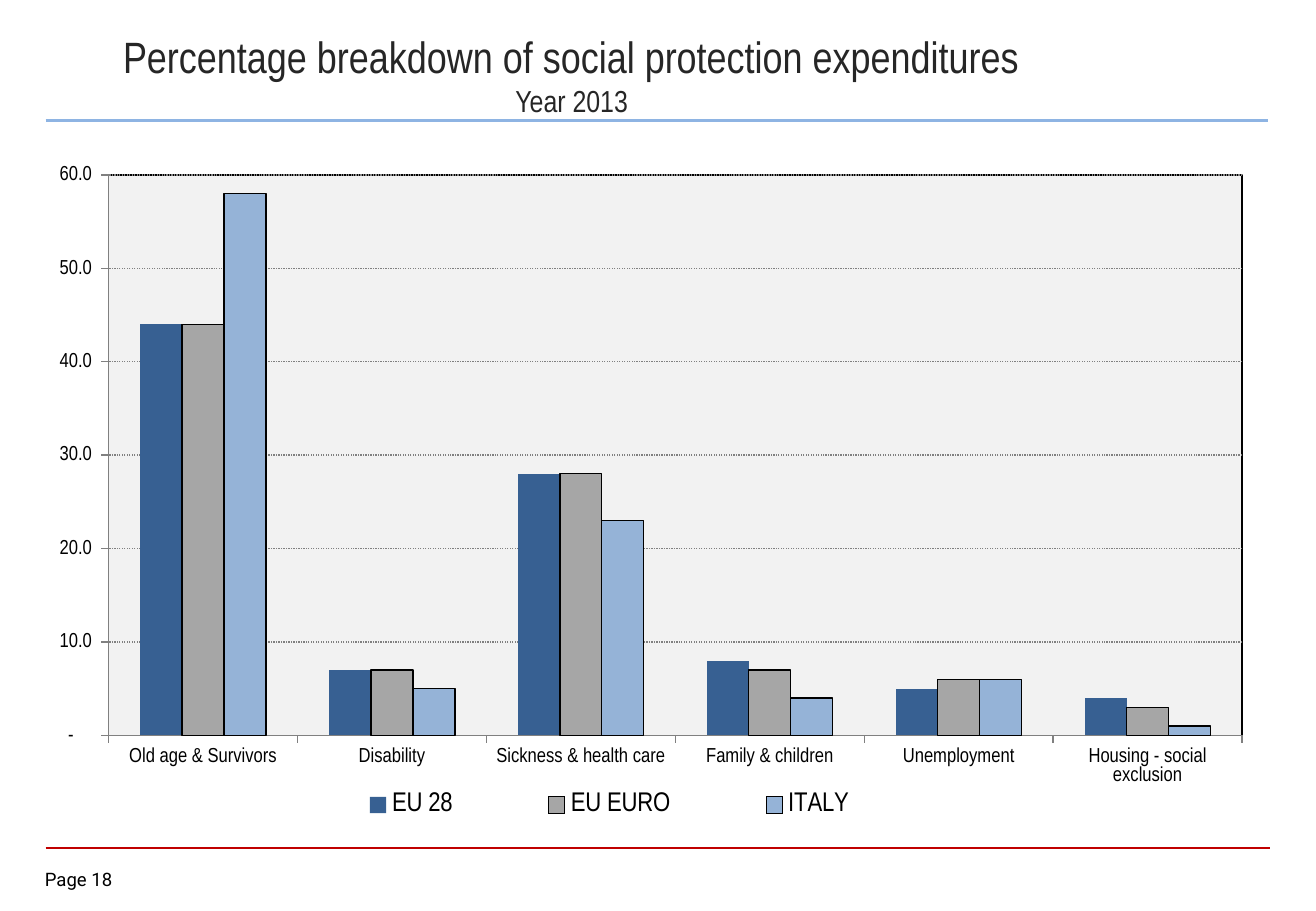
from dataclasses import dataclass

from lxml import etree
from pptx import Presentation
from pptx.chart.data import CategoryChartData
from pptx.dml.color import RGBColor
from pptx.enum.chart import XL_CHART_TYPE, XL_LEGEND_POSITION, XL_TICK_MARK
from pptx.enum.dml import MSO_LINE
from pptx.enum.shapes import MSO_CONNECTOR
from pptx.enum.text import MSO_ANCHOR, MSO_AUTO_SIZE, PP_ALIGN
from pptx.oxml import parse_xml
from pptx.oxml.ns import nsdecls, qn
from pptx.util import Pt


@dataclass(frozen=True)
class Theme:
    black: RGBColor = RGBColor(0x00, 0x00, 0x00)
    title: RGBColor = RGBColor(0x26, 0x26, 0x26)
    header_rule: RGBColor = RGBColor(0x8E, 0xB4, 0xE3)
    footer_rule: RGBColor = RGBColor(0xC0, 0x00, 0x00)
    axis: RGBColor = RGBColor(0x80, 0x80, 0x80)
    plot: RGBColor = RGBColor(0xF2, 0xF2, 0xF2)
    eu_28: RGBColor = RGBColor(0x37, 0x60, 0x92)
    eu_euro: RGBColor = RGBColor(0xA6, 0xA6, 0xA6)
    italy: RGBColor = RGBColor(0x95, 0xB3, 0xD7)
    narrow: str = "Arial Narrow"
    page: str = "Roboto"
    title_size: float = 26
    subtitle_size: float = 18
    legend_size: float = 16
    axis_size: float = 12
    page_size: float = 11


THEME = Theme()
NUMBER_FORMAT = r'_-* #,##0.0_-;\-* #,##0.0_-;_-* "-"??_-;_-@_-'
CATEGORIES = ("Old age & Survivors", "Disability", "Sickness & health care",
              "Family & children", "Unemployment", "Housing - social exclusion")
# name, values, fill, outlined
SERIES = (
    ("EU 28", (44, 7, 28, 8, 5, 4), THEME.eu_28, False),
    ("EU EURO", (44, 7, 28, 7, 6, 3), THEME.eu_euro, True),
    ("ITALY", (58, 5, 23, 4, 6, 1), THEME.italy, True),
)


def set_font(font, name, size, color):
    for attribute, value in {"name": name, "size": Pt(size), "bold": False}.items():
        setattr(font, attribute, value)
    font.color.rgb = color


def set_frame(text_frame, **formats):
    defaults = {"word_wrap": True, "auto_size": MSO_AUTO_SIZE.NONE,
                "vertical_anchor": MSO_ANCHOR.TOP}
    for attribute, value in (defaults | formats).items():
        setattr(text_frame, attribute, value)


def add_rule(slide, left, top, width, color, weight):
    rule = slide.shapes.add_connector(
        MSO_CONNECTOR.STRAIGHT, Pt(left), Pt(top), Pt(left + width), Pt(top))
    rule.line.color.rgb = color
    rule.line.width = Pt(weight)
    etree.SubElement(rule._element.spPr, qn("a:effectLst"))


def add_header(slide, left, top, width, height):
    title = slide.shapes.title
    title.left, title.top, title.width, title.height = map(Pt, (left, top, width, height))
    frame = title.text_frame
    set_frame(frame, margin_top=Pt(4), margin_bottom=Pt(0))
    frame.text = "Percentage breakdown of social protection expenditures\nYear 2013"
    for paragraph, size in zip(frame.paragraphs, (THEME.title_size, THEME.subtitle_size)):
        for attribute, value in {"alignment": PP_ALIGN.CENTER, "line_spacing": 1.0,
                                 "space_before": Pt(0)}.items():
            setattr(paragraph, attribute, value)
        set_font(paragraph.runs[0].font, THEME.narrow, size, THEME.title)
    add_rule(slide, left, top + 57.6, 724.5, THEME.header_rule, 1.5)


def add_footer(slide, left, top, width):
    add_rule(slide, left, top, width, THEME.footer_rule, 1)
    box = slide.shapes.add_textbox(Pt(left - 0.5), Pt(top + 12), Pt(53), Pt(16))
    frame = box.text_frame
    set_frame(frame, word_wrap=False, margin_left=0, margin_top=0,
              margin_right=0, margin_bottom=0)
    frame.text = "Page 18"
    set_font(frame.paragraphs[0].runs[0].font, THEME.page, THEME.page_size, THEME.black)


def make_layout(x, y, width, height, inner=False):
    """Return a manual chart layout in fractions of the chart area."""
    target = '<c:layoutTarget val="inner"/>' if inner else ""
    return parse_xml(
        f'<c:layout {nsdecls("c")}><c:manualLayout>{target}'
        '<c:xMode val="edge"/><c:yMode val="edge"/>'
        f'<c:x val="{x}"/><c:y val="{y}"/><c:w val="{width}"/><c:h val="{height}"/>'
        '</c:manualLayout></c:layout>')


def format_plot_area(chart):
    plot_area = chart._chartSpace.chart.plotArea
    for layout in plot_area.findall(qn("c:layout")):
        plot_area.remove(layout)
    plot_area.insert(0, make_layout(0.052, 0.023, 0.937, 0.814, inner=True))
    plot_area.append(parse_xml(
        f'<c:spPr {nsdecls("c", "a")}>'
        f'<a:solidFill><a:srgbClr val="{THEME.plot}"/></a:solidFill>'
        f'<a:ln w="{Pt(0.75)}"><a:solidFill><a:srgbClr val="{THEME.black}"/>'
        '</a:solidFill></a:ln></c:spPr>'))


def format_axes(chart):
    for axis in (chart.category_axis, chart.value_axis):
        axis.major_tick_mark = XL_TICK_MARK.OUTSIDE
        axis.minor_tick_mark = XL_TICK_MARK.NONE
        axis.format.line.color.rgb = THEME.axis
        axis.format.line.width = Pt(0.75)
        set_font(axis.tick_labels.font, THEME.narrow, THEME.axis_size, THEME.black)
    value_axis = chart.value_axis
    for attribute, value in {"minimum_scale": 0, "maximum_scale": 60, "major_unit": 10,
                             "has_major_gridlines": True}.items():
        setattr(value_axis, attribute, value)
    value_axis.tick_labels.number_format = NUMBER_FORMAT
    value_axis.tick_labels.number_format_is_linked = False
    gridline = value_axis.major_gridlines.format.line
    gridline.color.rgb = THEME.axis
    gridline.width = Pt(0.75)
    gridline.dash_style = MSO_LINE.ROUND_DOT


def format_legend(chart):
    chart.has_legend = True
    legend = chart.legend
    legend.position = XL_LEGEND_POSITION.RIGHT
    legend.include_in_layout = False
    set_font(legend.font, THEME.narrow, THEME.legend_size, THEME.black)
    element = legend._element
    for layout in element.findall(qn("c:layout")):
        element.remove(layout)
    element.find(qn("c:legendPos")).addnext(make_layout(0.196, 0.913, 0.54, 0.05))


def add_expenditure_chart(slide, left, top, width, height):
    data = CategoryChartData(number_format="0")
    data.categories = CATEGORIES
    for name, values, _, _ in SERIES:
        data.add_series(name, values)
    chart = slide.shapes.add_chart(
        XL_CHART_TYPE.COLUMN_CLUSTERED, Pt(left), Pt(top), Pt(width), Pt(height), data).chart
    chart.has_title = False
    set_font(chart.font, THEME.narrow, THEME.axis_size, THEME.black)
    plot = chart.plots[0]
    for attribute, value in {"gap_width": 150, "overlap": 0,
                             "vary_by_categories": False}.items():
        setattr(plot, attribute, value)
    for series, (_, _, color, outlined) in zip(plot.series, SERIES):
        series.format.fill.solid()
        series.format.fill.fore_color.rgb = color
        if outlined:
            series.format.line.color.rgb = THEME.black
            series.format.line.width = Pt(0.75)
        else:
            series.format.line.fill.background()
    format_axes(chart)
    format_legend(chart)
    format_plot_area(chart)


def main():
    presentation = Presentation()
    presentation.slide_width, presentation.slide_height = Pt(780), Pt(540)
    slide = presentation.slides.add_slide(presentation.slide_layouts.get_by_name("Title Only"))
    left = 27.1
    add_header(slide, left, 13.7, 623.5, 51)
    add_expenditure_chart(slide, left, 94.3, 717, 408.2)
    add_footer(slide, left, 502.5, 725.8)
    presentation.save("out.pptx")


if __name__ == "__main__":
    main()
